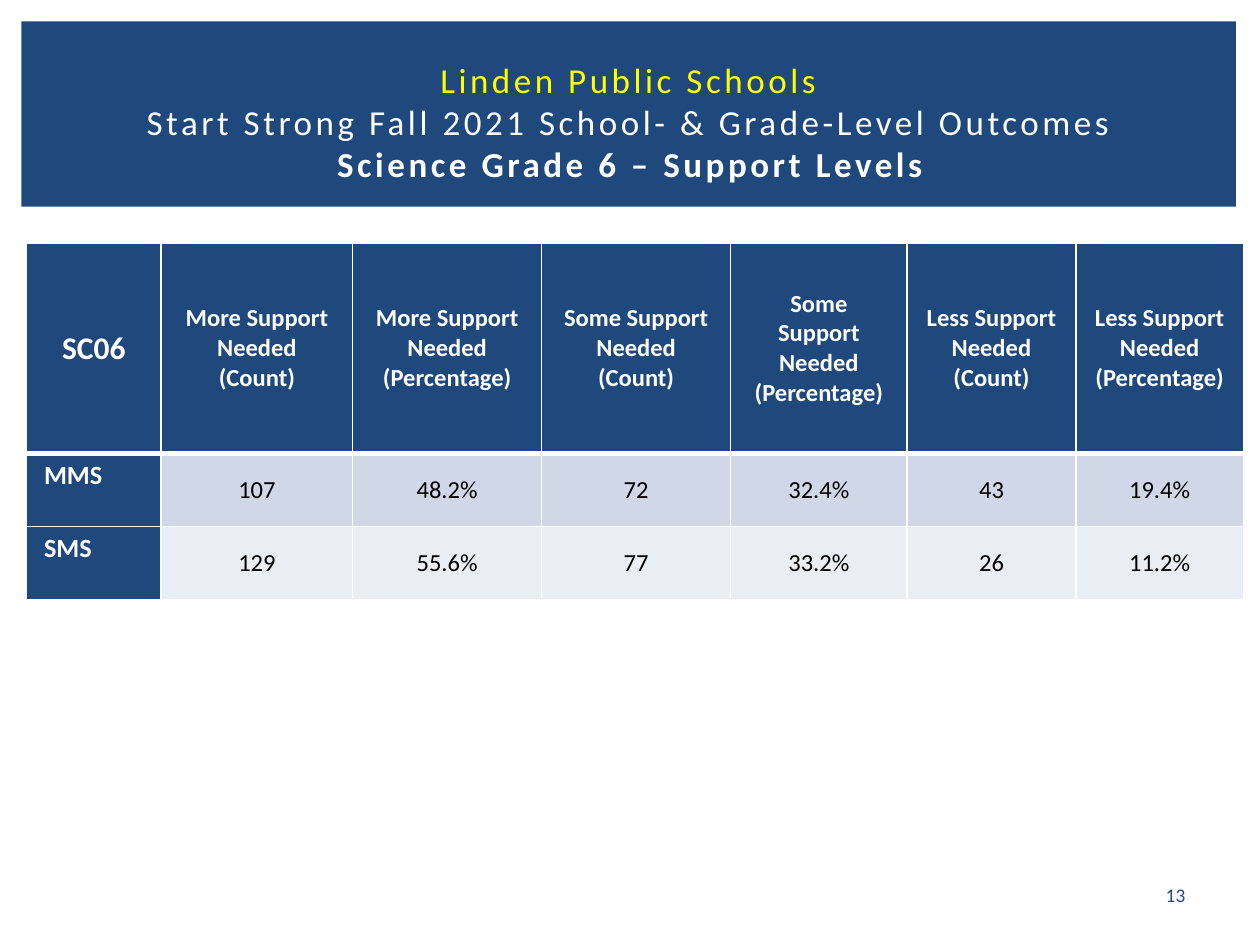
from lxml.etree import SubElement
from pptx import Presentation
from pptx.dml.color import RGBColor
from pptx.enum.shapes import MSO_SHAPE
from pptx.enum.text import MSO_ANCHOR, PP_ALIGN
from pptx.oxml.ns import qn
from pptx.util import Inches, Pt

NAVY = RGBColor(0x1F, 0x49, 0x7D)
WHITE = RGBColor(0xFF, 0xFF, 0xFF)
YELLOW = RGBColor(0xFF, 0xFF, 0x00)
BLACK = RGBColor(0x00, 0x00, 0x00)
BANDS = [RGBColor(0xD0, 0xD8, 0xE8), RGBColor(0xE9, 0xED, 0xF4)]
FONT = "Calibri"

TITLE_LINES = [
    ("Linden Public Schools", YELLOW, False),
    ("Start Strong Fall 2021 School- & Grade-Level Outcomes", WHITE, False),
    ("Science Grade 6 – Support Levels", WHITE, True),
]
COLUMN_WIDTHS = [1.07, 1.52, 1.5, 1.5, 1.4, 1.34, 1.33]
ROW_HEIGHTS = [1.67, 0.58, 0.58]
SUPPORT_LEVELS = ["More", "Some", "Less"]
MEASURES = ["(Count)", "(Percentage)"]
SCHOOLS = [
    ("MMS", ["107", "48.2%", "72", "32.4%", "43", "19.4%"]),
    ("SMS", ["129", "55.6%", "77", "33.2%", "26", "11.2%"]),
]


def add_run(paragraph, text, size, color, bold=False):
    run = paragraph.add_run()
    run.text = text
    run.font.name = FONT
    run.font.size = Pt(size)
    run.font.bold = bold
    run.font.color.rgb = color
    return run


def add_text_box(slide, left, top, width, height):
    """Add a centred, wrapping text box and return its first paragraph."""
    box = slide.shapes.add_textbox(Inches(left), Inches(top), Inches(width), Inches(height))
    frame = box.text_frame
    frame.word_wrap = True
    frame.vertical_anchor = MSO_ANCHOR.MIDDLE
    paragraph = frame.paragraphs[0]
    paragraph.alignment = PP_ALIGN.CENTER
    return paragraph


def add_banner(slide):
    banner = slide.shapes.add_shape(
        MSO_SHAPE.RECTANGLE, Inches(0.17), Inches(0.17), Inches(9.64), Inches(1.47))
    banner.shadow.inherit = False
    banner.fill.solid()
    banner.fill.fore_color.rgb = NAVY
    banner.line.fill.background()


def add_title(slide):
    paragraph = add_text_box(slide, 0.28, 0.39, 9.44, 1.15)
    for index, (text, color, bold) in enumerate(TITLE_LINES):
        if index:
            paragraph.add_line_break()
        run = add_run(paragraph, text, 20, color, bold)
        run.font._element.set("spc", "200")


def set_borders(cell, top=1, bottom=1):
    properties = cell._tc.get_or_add_tcPr()
    for tag, width in (("a:lnL", 1), ("a:lnR", 1), ("a:lnT", top), ("a:lnB", bottom)):
        line = SubElement(properties, qn(tag), w=str(Pt(width)))
        fill = SubElement(line, qn("a:solidFill"))
        SubElement(fill, qn("a:srgbClr"), val=str(WHITE))


def fill_cell(cell, lines, size, color, fill, bold=False,
              alignment=PP_ALIGN.CENTER, anchor=MSO_ANCHOR.MIDDLE):
    cell.fill.solid()
    cell.fill.fore_color.rgb = fill
    cell.vertical_anchor = anchor
    cell.margin_left = cell.margin_right = Inches(0.14)
    cell.margin_top = cell.margin_bottom = Inches(0.05)
    frame = cell.text_frame
    for index, text in enumerate(lines):
        paragraph = frame.add_paragraph() if index else frame.paragraphs[0]
        paragraph.alignment = alignment
        add_run(paragraph, text, size, color, bold)


def add_support_table(slide):
    table = slide.shapes.add_table(
        len(ROW_HEIGHTS), len(COLUMN_WIDTHS), Inches(0.21), Inches(1.93),
        Inches(sum(COLUMN_WIDTHS)), Inches(sum(ROW_HEIGHTS))).table
    for column, width in zip(table.columns, COLUMN_WIDTHS):
        column.width = Inches(width)
    for row, height in zip(table.rows, ROW_HEIGHTS):
        row.height = Inches(height)

    # Thin white grid with a heavier rule under the header
    for row_index, row in enumerate(table.rows):
        for cell in row.cells:
            set_borders(cell, top=3 if row_index == 1 else 1,
                        bottom=3 if row_index == 0 else 1)

    # Header row
    fill_cell(table.cell(0, 0), ["SC06"], 18, WHITE, NAVY, bold=True)
    headers = [(f"{level} Support Needed", measure)
               for level in SUPPORT_LEVELS for measure in MEASURES]
    for column_index, lines in enumerate(headers, start=1):
        fill_cell(table.cell(0, column_index), lines, 14, WHITE, NAVY, bold=True)

    # One banded row per school
    for row_index, ((school, values), band) in enumerate(zip(SCHOOLS, BANDS), start=1):
        fill_cell(table.cell(row_index, 0), [school], 15, WHITE, NAVY, bold=True,
                  alignment=PP_ALIGN.LEFT, anchor=MSO_ANCHOR.TOP)
        for column_index, value in enumerate(values, start=1):
            fill_cell(table.cell(row_index, column_index), [value], 14, BLACK, band)


def add_page_number(slide):
    add_run(add_text_box(slide, 9.01, 6.95, 0.64, 0.3), "13", 11, NAVY)


def main():
    presentation = Presentation()
    presentation.slide_width = Inches(10)
    presentation.slide_height = Inches(7.5)
    slide = presentation.slides.add_slide(presentation.slide_layouts[6])
    add_banner(slide)
    add_title(slide)
    add_support_table(slide)
    add_page_number(slide)
    presentation.save("out.pptx")


if __name__ == "__main__":
    main()
